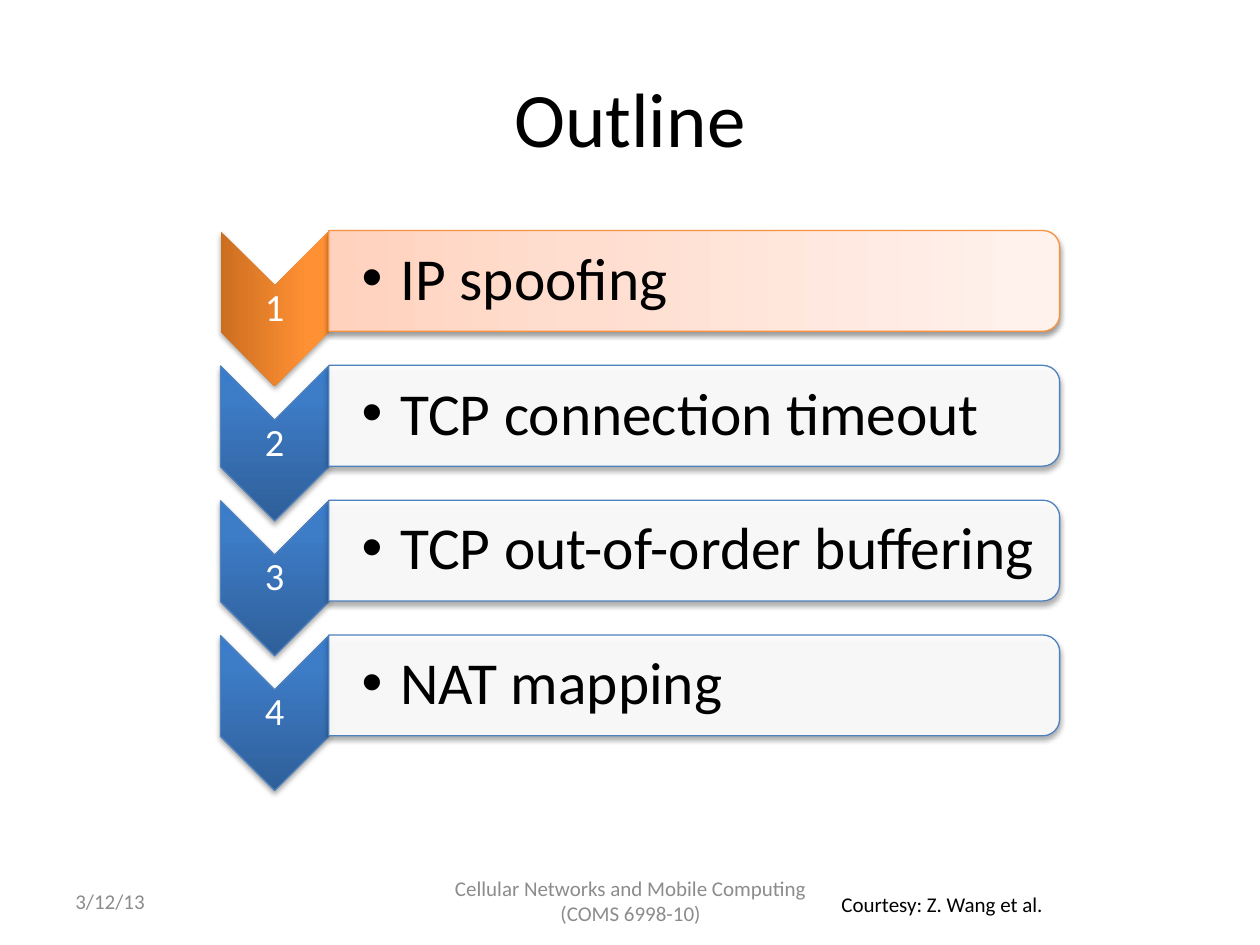
from lxml import etree
from pptx import Presentation
from pptx.dml.color import RGBColor
from pptx.enum.shapes import MSO_SHAPE
from pptx.enum.text import MSO_ANCHOR, PP_ALIGN
from pptx.oxml.ns import qn
from pptx.util import Inches, Pt

CHEVRON, BAR = MSO_SHAPE.CHEVRON, MSO_SHAPE.ROUND_2_SAME_RECTANGLE
LEFT, CENTER = PP_ALIGN.LEFT, PP_ALIGN.CENTER
TOP, MIDDLE = MSO_ANCHOR.TOP, MSO_ANCHOR.MIDDLE

TITLE = "Outline"
TOPICS = ["IP spoofing", "TCP connection timeout",
          "TCP out-of-order buffering", "NAT mapping"]
CURRENT_TOPIC = 0
DATE = "3/12/13"
COURSE = "Cellular Networks and Mobile Computing (COMS 6998-10)"
CREDIT = "Courtesy: Z. Wang et al."

THEME = {
    "font": "Calibri",
    "ink": "000000", "muted": "8C8C8C", "number": "FFFFFF",
    "title_size": 44, "topic_size": 34, "number_size": 22, "footer_size": 12,
    "line_width": 0.75,
    "current": {
        "chevron": [(0, "CC6E20"), (80, "FF9034"), (100, "FF9136")],
        "chevron_line": None,
        "bar": [(0, "FFD2BD"), (35, "FFDED0"), (100, "FFF2ED")],
        "bar_line": "F69240", "turns": 1, "bar_shadow": (38, 1.6),
    },
    "other": {
        "chevron": [(0, "2F5F99"), (80, "3D7CC7"), (100, "3A7CCB")],
        "chevron_line": "4F81BD",
        "bar": "FFFFFF",
        "bar_line": "4F81BD", "turns": 0, "bar_shadow": (35, 1.8),
    },
}
CHEVRON_SHADOW = (35, 1.8)
BAR_OPACITY = 90

SLIDE_W, SLIDE_H = 10, 7.5
FIRST_ROW, ROW_PITCH = 2.23, 1.07
CHEVRON_X, CHEVRON_DROP = 2.18, 0.22
CHEVRON_SIZE, NUMBER_SIZE = (1.23, 0.86), (0.86, 0.37)
BAR_X, BAR_SIZE = 5.51, (0.8, 5.8)
TOPIC_X, TOPIC_SIZE = 5.49, (5.76, 0.72)
TIGHT, TOPIC_INSET, HANG = 0.02, 0.26, 0.31
FOOTER_TOP, FOOTER_H = 6.95, 0.4


def child(parent, tag, **attributes):
    return etree.SubElement(parent, qn(tag), {k: str(v) for k, v in attributes.items()})


def centred(x, y, size):
    width, height = size
    return x - width / 2, y - height / 2, width, height


def add_text(slide, box, words, size, color, align=LEFT, anchor=MIDDLE,
             insets=None, spacing=None, wrap=True):
    frame = slide.shapes.add_textbox(*map(Inches, box)).text_frame
    frame.word_wrap = wrap
    frame.vertical_anchor = anchor
    if insets:
        (frame.margin_left, frame.margin_top,
         frame.margin_right, frame.margin_bottom) = map(Inches, insets)
    paragraph = frame.paragraphs[0]
    paragraph.alignment = align
    if spacing:
        paragraph.line_spacing = spacing
    run = paragraph.add_run()
    run.text = words
    run.font.name = THEME["font"]
    run.font.size = Pt(size)
    run.font.color.rgb = RGBColor.from_string(color)
    return paragraph


def add_bullet(paragraph):
    properties = paragraph._p.get_or_add_pPr()
    properties.set("marL", str(Inches(HANG)))
    properties.set("indent", str(-Inches(HANG)))
    child(properties, "a:buFont", typeface="Arial")
    child(properties, "a:buChar", char="•")


def fill_gradient(shape, stops, turns):
    shape.fill.background()
    blank = shape._element.spPr.find(qn("a:noFill"))
    gradient = etree.Element(qn("a:gradFill"), rotWithShape=str(turns))
    stop_list = child(gradient, "a:gsLst")
    for position, color in stops:
        stop = child(stop_list, "a:gs", pos=position * 1000)
        child(stop, "a:srgbClr", val=color)
    child(gradient, "a:lin", ang=270 * 60000, scaled=0)
    blank.getparent().replace(blank, gradient)


def add_turned(slide, kind, box, fill, line, turns, shadow):
    shape = slide.shapes.add_shape(kind, *map(Inches, box))
    shape.rotation = 90
    if isinstance(fill, str):
        shape.fill.solid()
        shape.fill.fore_color.rgb = RGBColor.from_string(fill)
        solid = shape._element.spPr.find(qn("a:solidFill"))
        child(solid[0], "a:alpha", val=BAR_OPACITY * 1000)
    else:
        fill_gradient(shape, fill, turns)
    if line:
        shape.line.color.rgb = RGBColor.from_string(line)
        shape.line.width = Pt(THEME["line_width"])
    else:
        shape.line.fill.background()
    shape.shadow.inherit = False
    opacity, distance = shadow
    effects = shape._element.spPr.find(qn("a:effectLst"))
    outer = child(effects, "a:outerShdw", blurRad=Pt(3.1), dist=Pt(distance),
                  dir=90 * 60000, rotWithShape=0)
    black = child(outer, "a:srgbClr", val=THEME["ink"])
    child(black, "a:alpha", val=opacity * 1000)


def add_topic(slide, index, topic):
    style = THEME["current" if index == CURRENT_TOPIC else "other"]
    row = FIRST_ROW + index * ROW_PITCH
    chevron_y = row + CHEVRON_DROP
    add_turned(slide, CHEVRON, centred(CHEVRON_X, chevron_y, CHEVRON_SIZE),
               style["chevron"], style["chevron_line"], style["turns"], CHEVRON_SHADOW)
    add_text(slide, centred(CHEVRON_X, chevron_y, NUMBER_SIZE), str(index + 1),
             THEME["number_size"], THEME["number"], CENTER,
             insets=(TIGHT,) * 4, spacing=0.9)
    add_turned(slide, BAR, centred(BAR_X, row, BAR_SIZE),
               style["bar"], style["bar_line"], style["turns"], style["bar_shadow"])
    add_bullet(add_text(slide, centred(TOPIC_X, row, TOPIC_SIZE), topic,
                        THEME["topic_size"], THEME["ink"],
                        insets=(TOPIC_INSET, TIGHT, TIGHT, TIGHT), spacing=0.9))


def main():
    deck = Presentation()
    deck.slide_width, deck.slide_height = Inches(SLIDE_W), Inches(SLIDE_H)
    slide = deck.slides.add_slide(deck.slide_layouts[6])
    add_text(slide, (0.5, 0.3, 9, 1.25), TITLE, THEME["title_size"], THEME["ink"], CENTER)
    for index, topic in enumerate(TOPICS):
        add_topic(slide, index, topic)
    small = THEME["footer_size"]
    add_text(slide, (3.42, FOOTER_TOP, 3.17, FOOTER_H), COURSE, small, THEME["muted"], CENTER)
    add_text(slide, (6.58, 7.03, 1.83, 0.3), CREDIT, small, THEME["ink"],
             anchor=TOP, wrap=False)
    add_text(slide, (0.5, FOOTER_TOP, 2.33, FOOTER_H), DATE, small, THEME["muted"])
    deck.save("out.pptx")


if __name__ == "__main__":
    main()
